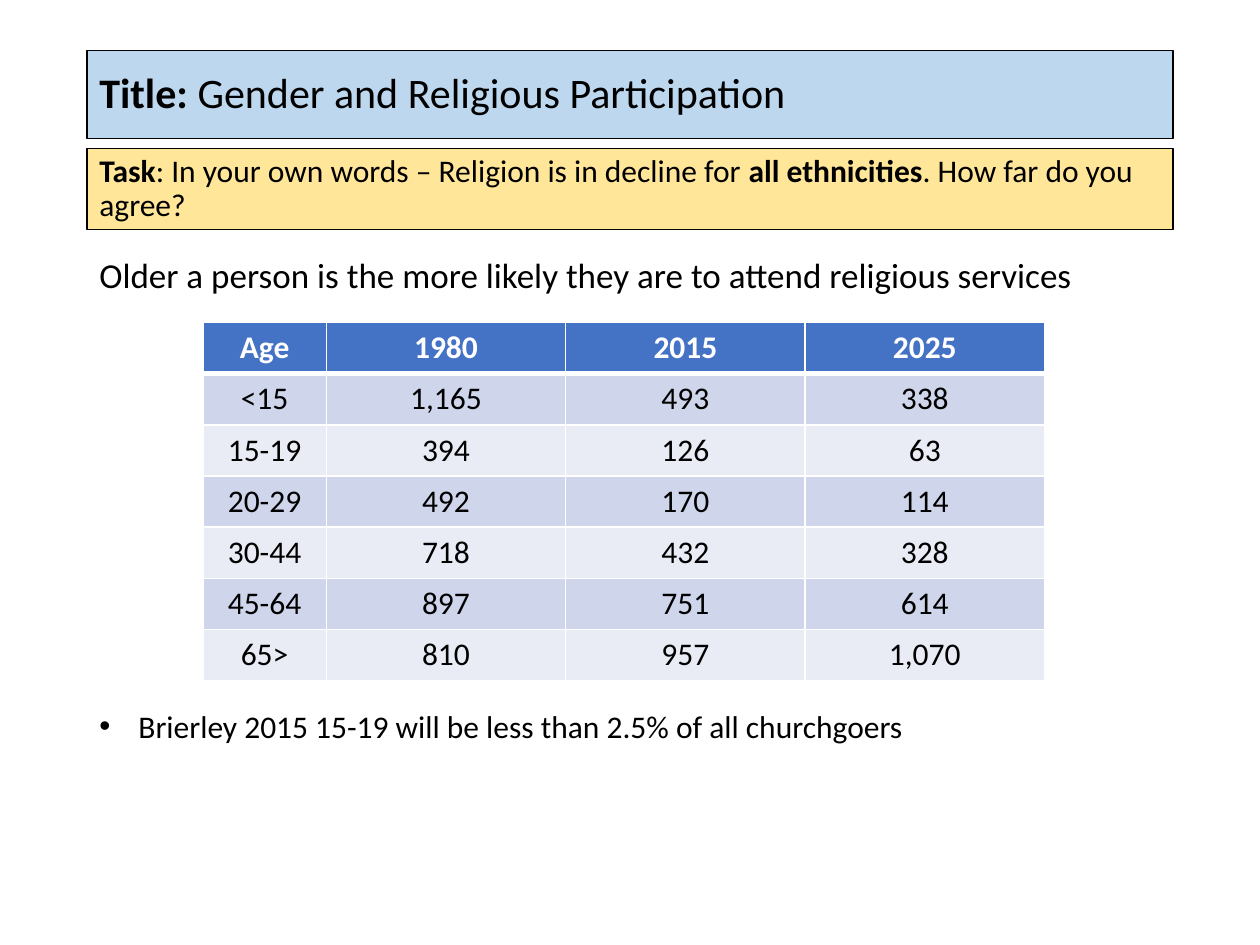
from pptx import Presentation
from pptx.dml.color import RGBColor
from pptx.enum.shapes import MSO_SHAPE as Shape
from pptx.enum.text import MSO_ANCHOR as Anchor, PP_ALIGN as Align
from pptx.oxml.ns import qn
from pptx.util import Inches, Pt
from lxml.etree import SubElement

BLACK = RGBColor(0x00, 0x00, 0x00)
WHITE = RGBColor(0xFF, 0xFF, 0xFF)
TITLE_BLUE = RGBColor(0xBD, 0xD7, 0xEE)
TASK_YELLOW = RGBColor(0xFF, 0xE6, 0x99)
HEADER_BLUE = RGBColor(0x44, 0x72, 0xC4)
BANDS = (RGBColor(0xE9, 0xEB, 0xF5), RGBColor(0xCF, 0xD5, 0xEA))

ATTENDANCE = [
    ("Age", "1980", "2015", "2025"),
    ("<15", "1,165", "493", "338"),
    ("15-19", "394", "126", "63"),
    ("20-29", "492", "170", "114"),
    ("30-44", "718", "432", "328"),
    ("45-64", "897", "751", "614"),
    ("65>", "810", "957", "1,070"),
]


class SlideBuilder:
    """Style and current slide; lengths are cells of a 100 by 75 grid."""

    font = "Calibri"
    left, width = 6.9, 86.2

    def __init__(self, presentation):
        self.slide = presentation.slides.add_slide(presentation.slide_layouts[6])
        self.unit = presentation.slide_width / 100

    def grid(self, *cells):
        return [round(cell * self.unit) for cell in cells]

    def add_runs(self, paragraph, runs, size, color=BLACK):
        """Add (text, bold) runs to a paragraph."""
        for text, bold in runs:
            run = paragraph.add_run()
            run.text = text
            run.font.name = self.font
            run.font.size = Pt(size)
            run.font.bold = bold
            run.font.color.rgb = color

    def banner(self, top, height, fill, runs, size):
        shape = self.slide.shapes.add_shape(
            Shape.RECTANGLE, *self.grid(self.left, top, self.width, height))
        shape.shadow.inherit = False
        shape.fill.solid()
        shape.fill.fore_color.rgb = fill
        shape.line.color.rgb = BLACK
        shape.line.width = Pt(0.75)
        frame = shape.text_frame
        frame.word_wrap = True
        frame.vertical_anchor = Anchor.MIDDLE
        paragraph = frame.paragraphs[0]
        paragraph.alignment = Align.LEFT
        paragraph.line_spacing = 0.9
        self.add_runs(paragraph, runs, size)

    def text(self, top, height, text, size, bullet=False):
        box = self.slide.shapes.add_textbox(
            *self.grid(self.left, top, self.width, height))
        box.text_frame.word_wrap = True
        paragraph = box.text_frame.paragraphs[0]
        if bullet:
            properties = paragraph._p.get_or_add_pPr()
            indent = Inches(0.31)
            properties.set("marL", str(indent))
            properties.set("indent", str(-indent))
            SubElement(properties, qn("a:buFont"), typeface="Arial")
            SubElement(properties, qn("a:buChar"), char="•")
        self.add_runs(paragraph, [(text, False)], size)

    def border(self, cell, side, points):
        line = SubElement(cell._tc.get_or_add_tcPr(), qn(f"a:ln{side}"),
                          w=str(Pt(points)))
        fill = SubElement(line, qn("a:solidFill"))
        SubElement(fill, qn("a:srgbClr"), val=str(WHITE))

    def table(self, left, top, column_widths, row_height, rows, size):
        table = self.slide.shapes.add_table(
            len(rows), len(column_widths),
            *self.grid(left, top, sum(column_widths), row_height * len(rows))).table
        for column, width in zip(table.columns, self.grid(*column_widths)):
            column.width = width
        for i, values in enumerate(rows):
            header = i == 0
            for j, value in enumerate(values):
                cell = table.cell(i, j)
                # A thicker rule parts the header from the body
                for side in "LRTB":
                    thick = (i, side) in ((0, "B"), (1, "T"))
                    self.border(cell, side, 3 if thick else 1)
                cell.fill.solid()
                cell.fill.fore_color.rgb = HEADER_BLUE if header else BANDS[i % 2]
                paragraph = cell.text_frame.paragraphs[0]
                paragraph.alignment = Align.CENTER
                self.add_runs(paragraph, [(value, header)], size,
                              WHITE if header else BLACK)


def main():
    presentation = Presentation()
    presentation.slide_width = Inches(10)
    presentation.slide_height = Inches(7.5)
    builder = SlideBuilder(presentation)

    # Title and task banners
    builder.banner(4, 7, TITLE_BLUE, [
        ("Title: ", True), ("Gender and Religious Participation", False)], 24)
    builder.banner(11.8, 6.4, TASK_YELLOW, [
        ("Task", True),
        (": In your own words – Religion is in decline for ", False),
        ("all ethnicities", True),
        (". How far do you agree?", False)], 18)

    # Claim, attendance by age, and closing point
    builder.text(19.6, 4.4, "Older a person is the more likely they are to "
                 "attend religious services", 20)
    builder.table(16.1, 25.6, (9.8, 19, 19, 19), 4.06, ATTENDANCE, 18)
    builder.text(55.6, 7.1, "Brierley 2015 15-19 will be less than 2.5% of all "
                 "churchgoers", 18, bullet=True)

    presentation.save("out.pptx")


if __name__ == "__main__":
    main()
